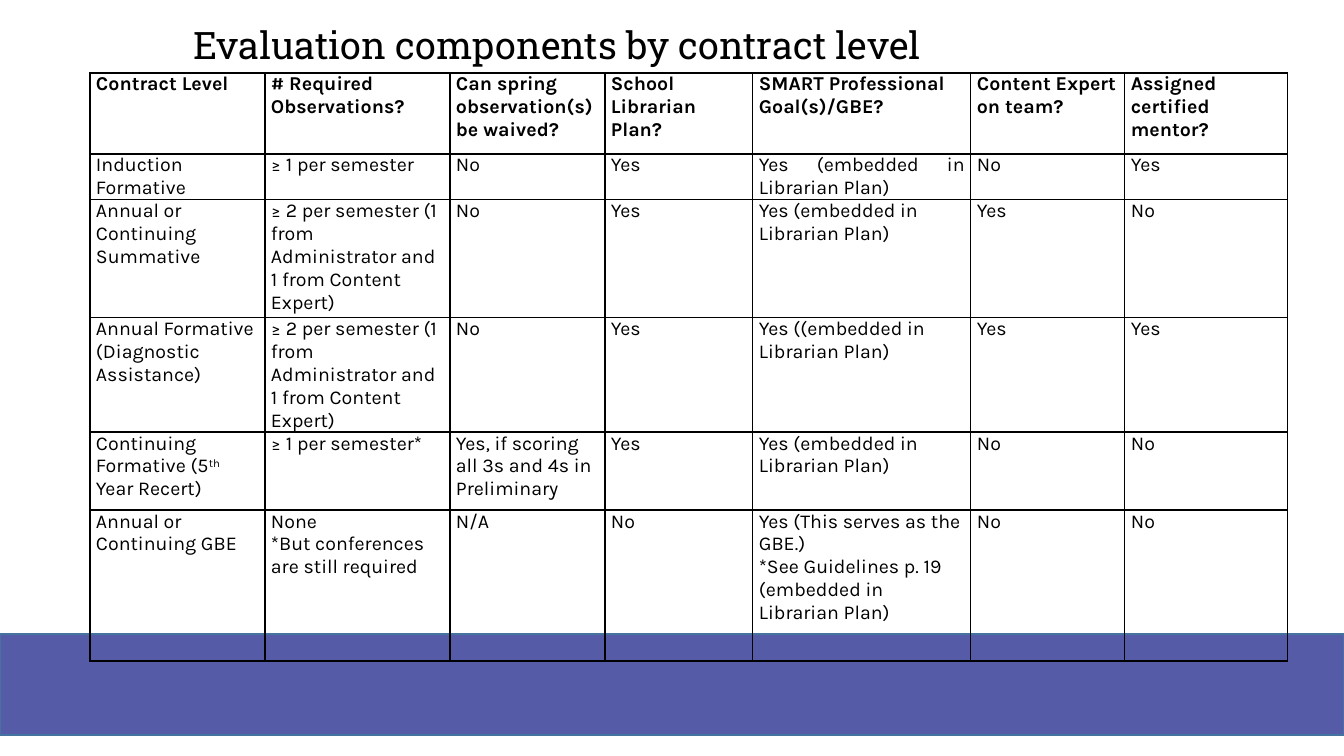
from dataclasses import dataclass

from lxml import etree
from pptx import Presentation, util as u
from pptx.dml.color import RGBColor
from pptx.enum import shapes, text
from pptx.oxml import ns

EMU_PER_PX = 914400 / 100.8


def px(length):
    return u.Emu(round(length * EMU_PER_PX))


@dataclass(frozen=True)
class Theme:
    ink: str = "000000"
    band: str = "565BA7"
    band_edge: str = "43739E"
    title_font: str = "Roboto Slab"
    body_font: str = "Karla"
    title_size: int = 27
    body_size: int = 14
    rule_width: int = 1


class SlideBuilder:
    def __init__(self, page, theme):
        self.page = page
        self.theme = theme

    def style(self, para, name, size, bold=False):
        font = para.font
        font.name, font.size, font.bold = name, u.Pt(size), bold
        font.color.rgb = RGBColor.from_string(self.theme.ink)

    def title(self, words, left, top, width, height):
        box = self.page.shapes.title
        box.left, box.top, box.width, box.height = map(px, (left, top, width, height))
        frame = box.text_frame
        frame.auto_size = text.MSO_AUTO_SIZE.NONE
        frame.vertical_anchor = text.MSO_ANCHOR.BOTTOM
        frame.text = words
        para = frame.paragraphs[0]
        para.alignment = text.PP_ALIGN.LEFT
        para.line_spacing = 0.9
        self.style(para, self.theme.title_font, self.theme.title_size)

    def band(self, left, top, width, height):
        box = self.page.shapes.add_shape(
            shapes.MSO_SHAPE.RECTANGLE, *map(px, (left, top, width, height)))
        box.shadow.inherit = False
        box.fill.solid()
        box.fill.fore_color.rgb = RGBColor.from_string(self.theme.band)
        box.line.color.rgb = RGBColor.from_string(self.theme.band_edge)
        box.line.width = u.Pt(1)

    def borders(self, cell):
        props = cell._tc.get_or_add_tcPr()
        for side in ("a:lnL", "a:lnR", "a:lnT", "a:lnB"):
            line = etree.SubElement(props, ns.qn(side), w=str(u.Pt(self.theme.rule_width)))
            fill = etree.SubElement(line, ns.qn("a:solidFill"))
            etree.SubElement(fill, ns.qn("a:srgbClr"), val=self.theme.ink)

    def cell(self, cell, words, bold):
        """Fill a cell; newlines split paragraphs and ^ encloses superscripts."""
        cell.margin_left = cell.margin_right = px(6)
        cell.margin_top = cell.margin_bottom = 0
        self.borders(cell)
        cell.fill.background()
        frame = cell.text_frame
        for index, line in enumerate(words.split("\n")):
            para = frame.add_paragraph() if index else frame.paragraphs[0]
            self.style(para, self.theme.body_font, self.theme.body_size, bold)
            for part, piece in enumerate(line.split("^")):
                span = para.add_run()
                span.text = piece
                if part % 2:
                    span._r.get_or_add_rPr().set("baseline", "30000")

    def table(self, rows, left, top, widths, heights):
        frame = self.page.shapes.add_table(
            len(heights), len(widths),
            *map(px, (left, top, sum(widths), sum(heights))))
        table = frame.table
        table.first_row = table.horz_banding = False
        for column, width in zip(table.columns, widths):
            column.width = px(width)
        for row, height in zip(table.rows, heights):
            row.height = px(height)
        for r, row in enumerate(rows):
            for c, words in enumerate(row):
                self.cell(table.cell(r, c), words, bold=r == 0)
        return table


EMBEDDED = "Yes (embedded in Librarian Plan)"
TWO_OBSERVATIONS = "≥ 2 per semester (1 from Administrator and 1 from Content Expert)"
ROWS = [
    ["Contract Level", "# Required Observations?", "Can spring observation(s) be waived?",
     "School Librarian Plan?", "SMART Professional Goal(s)/GBE?",
     "Content Expert on team?", "Assigned certified mentor?"],
    ["Induction Formative", "≥ 1 per semester", "No", "Yes", EMBEDDED, "No", "Yes"],
    ["Annual or Continuing Summative", TWO_OBSERVATIONS, "No", "Yes", EMBEDDED, "Yes", "No"],
    ["Annual Formative (Diagnostic Assistance)", TWO_OBSERVATIONS, "No", "Yes",
     "Yes ((embedded in Librarian Plan)", "Yes", "Yes"],
    ["Continuing Formative (5^th^ Year Recert)", "≥ 1 per semester*",
     "Yes, if scoring all 3s and 4s in Preliminary", "Yes", EMBEDDED, "No", "No"],
    ["Annual or Continuing GBE", "None\n*But conferences are still required", "N/A", "No",
     "Yes (This serves as the GBE.)\n*See Guidelines p. 19 (embedded in Librarian Plan)",
     "No", "No"],
]


def main():
    deck = Presentation()
    deck.slide_width, deck.slide_height = px(1344), px(756)
    title_only = deck.slide_layouts[5]
    builder = SlideBuilder(deck.slides.add_slide(title_only), Theme())

    # Footer band behind the table
    builder.band(0, 634, 1344, 101)

    # Evaluation table
    table = builder.table(ROWS, 90, 73,
                          widths=[175, 185, 155, 148, 218, 154, 163],
                          heights=[81, 45, 118, 98, 78, 151])
    induction_goal = table.cell(1, 4).text_frame.paragraphs[0]
    induction_goal.alignment = text.PP_ALIGN.JUSTIFY

    # Title
    builder.title("Evaluation components by contract level", 183, 14, 967, 59)

    deck.save("out.pptx")


if __name__ == "__main__":
    main()
